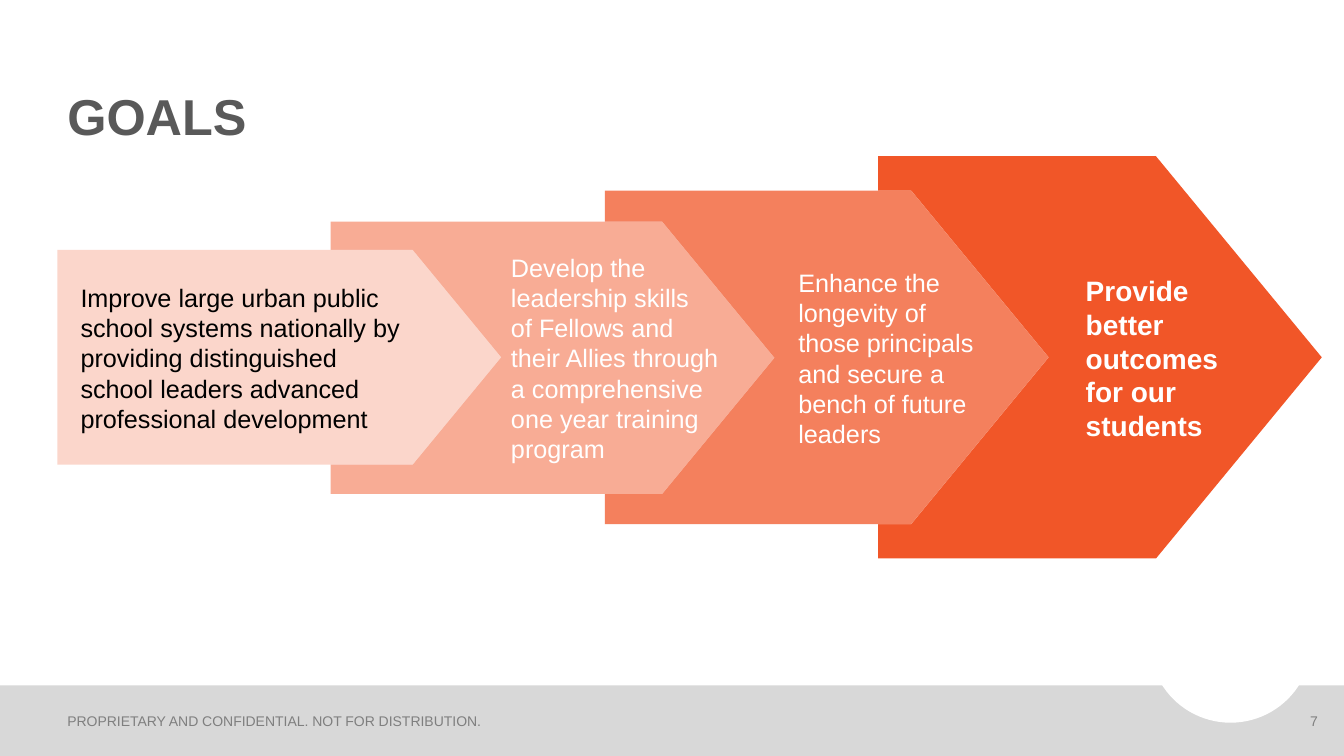
from lxml.etree import SubElement
from pptx import Presentation
from pptx.dml.color import RGBColor as RGB
from pptx.enum.shapes import MSO_SHAPE as SHAPE
from pptx.enum.text import MSO_ANCHOR as ANCHOR, PP_ALIGN as ALIGN
from pptx.oxml.ns import qn
from pptx.util import Pt

PX = 9144
COLORS = {"orange": "F15628", "white": "FFFFFF", "black": "000000",
          "band": "D8D8D8", "title": "595959", "footer": "7F7F7F"}

deck = Presentation()
deck.slide_width, deck.slide_height = 1333 * PX, 750 * PX
slide = deck.slides.add_slide(deck.slide_layouts[6])


def add_block(preset, box, color, opacity=100):
    block = slide.shapes.add_shape(preset, *(length * PX for length in box))
    block.shadow.inherit = False
    block.fill.solid()
    block.fill.fore_color.rgb = RGB.from_string(COLORS[color])
    block.line.fill.background()
    if opacity < 100:
        tint = block.fill._xPr.find(".//" + qn("a:srgbClr"))
        SubElement(tint, qn("a:alpha"), val=str(opacity * 1000))
    return block


def add_words(words, box, color, font_format, frame_format={}, paragraph_format={}):
    frame = slide.shapes.add_textbox(*(length * PX for length in box)).text_frame
    frame.text = words
    paragraph = frame.paragraphs[0]
    for target, values in (
        (frame, {"word_wrap": True, "vertical_anchor": ANCHOR.MIDDLE, **frame_format}),
        (paragraph, paragraph_format),
    ):
        for name, value in values.items():
            setattr(target, name, value)
    for run in paragraph.runs:
        for name, value in {"name": "Arial", **font_format}.items():
            setattr(run.font, name, value)
        run.font.color.rgb = RGB.from_string(COLORS[color])


add_block(SHAPE.RECTANGLE, (0, 680, 1333, 70), "band")
add_block(SHAPE.OVAL, (1140, 556, 161, 161), "white")

add_words("GOALS", (57, 30, 1220, 120), "title", {"size": Pt(36), "bold": True},
          {"vertical_anchor": ANCHOR.BOTTOM}, {"line_spacing": 0.9})
add_words("PROPRIETARY AND CONFIDENTIAL. NOT FOR DISTRIBUTION.",
          (57, 701, 900, 28), "footer", {"size": Pt(10)})
add_words("7", (1261, 701, 56, 28), "footer", {"size": Pt(10)},
          paragraph_format={"alignment": ALIGN.RIGHT})

DOUBLE_AXIS = 710
arrows = [(213, 24), (270, 49), (331, 75), (399, 100)]
for step, (height, opacity) in reversed(list(enumerate(arrows))):
    box = (round(57 + 271.4 * step), (DOUBLE_AXIS - height) // 2, 440, height)
    layers = [("white", 100)] if opacity < 100 else []
    for color, layer_opacity in layers + [("orange", opacity)]:
        arrow = add_block(SHAPE.PENTAGON, box, color, layer_opacity)
        arrow.adjustments[0] = 0.412

goals = [
    ("Improve large urban public school systems nationally by providing "
     "distinguished school leaders advanced professional development",
     70, 342, 162, "black", {"size": Pt(18)}),
    ("Develop the leadership skills \vof Fellows and their Allies through "
     "a comprehensive one year training program",
     497, 226, 222, "white", {"size": Pt(18)}),
    ("Enhance the longevity of those principals and secure a bench of future leaders",
     782, 207, 192, "white", {"size": Pt(18)}),
    ("Provide better outcomes for our students",
     1067, 165, 178, "white", {"size": Pt(20), "bold": True}),
]
for goal, left, width, height, color, font_format in goals:
    add_words(goal, (left, (DOUBLE_AXIS - height) // 2, width, height), color, font_format)

deck.save("out.pptx")
